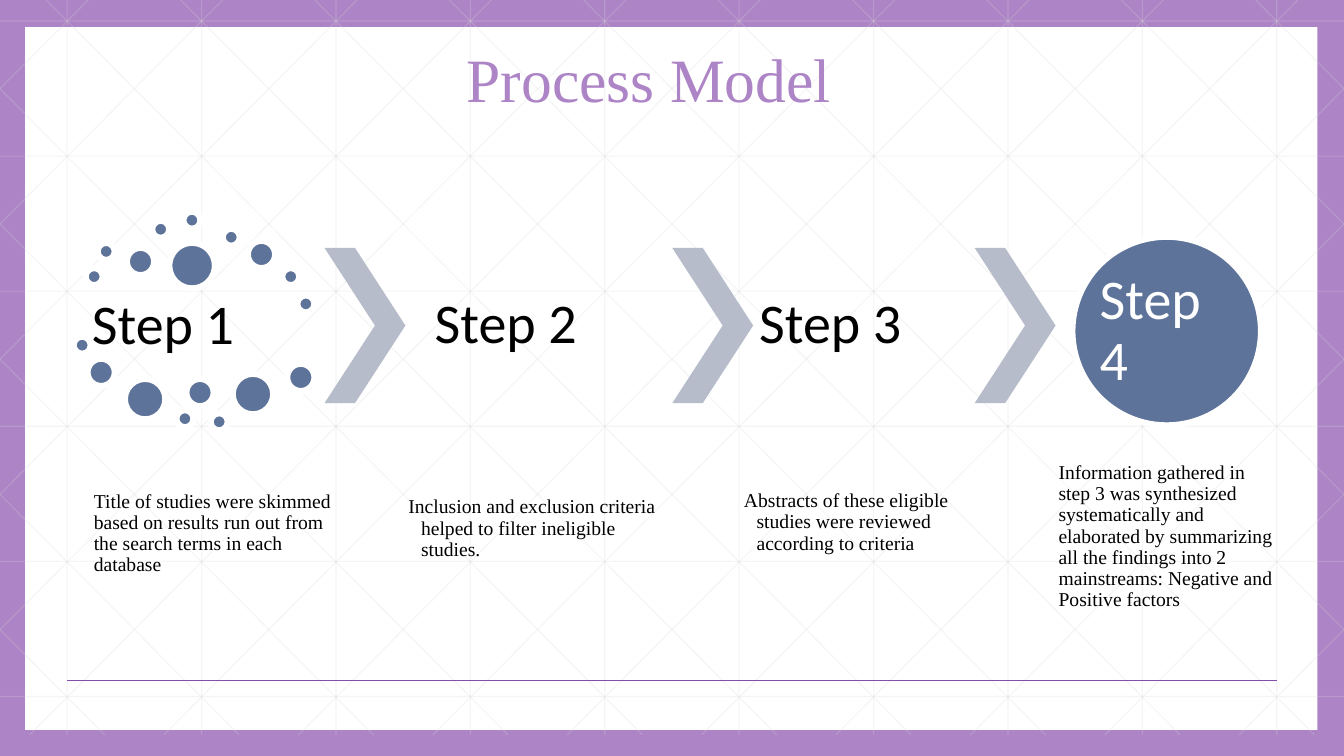
import dataclasses

import pptx
import pptx.dml.color
import pptx.enum.shapes
import pptx.enum.text
import pptx.oxml
import pptx.oxml.ns
import pptx.util

Pt = pptx.util.Pt
RGB = pptx.dml.color.RGBColor.from_string
SHAPE = pptx.enum.shapes.MSO_SHAPE
TOP = pptx.enum.text.MSO_ANCHOR.TOP
MIDDLE = pptx.enum.text.MSO_ANCHOR.MIDDLE


@dataclasses.dataclass(frozen=True)
class Theme:
    purple: str = "AD84C6"
    rule: str = "874EA9"
    grid: str = "D9D9D9"
    blue: str = "5D739A"
    chevron: str = "B6BCCA"
    white: str = "FFFFFF"
    black: str = "000000"
    serif: str = "Times New Roman"
    sans: str = "Calibri"
    title_size: int = 44
    step_size: int = 40
    body_size: int = 14


theme = Theme()
W, H = 960, 540

prs = pptx.Presentation()
prs.slide_width, prs.slide_height = Pt(W), Pt(H)
s = prs.slides.add_slide(prs.slide_layouts[6])
s.background.fill.solid()
s.background.fill.fore_color.rgb = RGB(theme.purple)


def add_text(text, box, font, size, color, inset=1.5, anchor=MIDDLE, hanging=0):
    """Add a one-paragraph text box; box and inset are in points."""
    tf = s.shapes.add_textbox(*map(Pt, box)).text_frame
    tf.word_wrap = True
    tf.vertical_anchor = anchor
    tf.margin_left = tf.margin_right = tf.margin_top = tf.margin_bottom = Pt(inset)
    p = tf.paragraphs[0]
    p.text = text
    p.line_spacing = 0.9
    if hanging:
        pPr = p._p.get_or_add_pPr()
        pPr.set("marL", str(Pt(hanging)))
        pPr.set("indent", str(-Pt(hanging)))
    r = p.runs[0]
    r.font.name, r.font.size = font, Pt(size)
    r.font.color.rgb = RGB(color)


def add_filled(kind, box, fill, outline=None):
    sp = s.shapes.add_shape(kind, *map(Pt, box))
    sp.shadow.inherit = False
    sp.fill.solid()
    sp.fill.fore_color.rgb = RGB(fill)
    if outline:
        sp.line.color.rgb = RGB(outline)
        sp.line.width = Pt(4.25)
    else:
        sp.line.fill.background()
    return sp


add_filled(SHAPE.RECTANGLE, (18, 19.4, 923, 502), theme.white)

# Background grid: verticals, horizontals, then mirrored diagonals clipped to the slide
grid_bottom, slope = 525, 0.994
lines = [(48 + 96 * i, 0, 48 + 96 * i, grid_bottom) for i in range(10)]
lines += [(0, 15 + 96.5 * i, W, 15 + 96.5 * i) for i in range(6)]
for i in range(-5, 10):
    x0 = 33 + 96 * i
    y1, y2 = max(0, -x0 / slope), min(grid_bottom, (W - x0) / slope)
    x1, x2 = x0 + slope * y1, x0 + slope * y2
    lines += [(x1, y1, x2, y2), (W - x1, y1, W - x2, y2)]
grid = [(line, theme.grid, 0.79, 25) for line in lines]
bottom_rule = ((48, 486, 912, 486), theme.rule, 1, 100)

for ends, color, width, opacity in grid + [bottom_rule]:
    cxn = s.shapes.add_connector(pptx.enum.shapes.MSO_CONNECTOR.STRAIGHT, *map(Pt, ends))
    cxn.line.color.rgb = RGB(color)
    cxn.line.width = Pt(width)
    if opacity < 100:
        clr = cxn.line._ln.find(".//" + pptx.oxml.ns.qn("a:srgbClr"))
        pptx.oxml.ns.qn("a:alpha")
        alpha = clr.makeelement(pptx.oxml.ns.qn("a:alpha"), {"val": str(opacity * 1000)})
        clr.append(alpha)
    spPr = cxn._element.spPr
    spPr.append(spPr.makeelement(pptx.oxml.ns.qn("a:effectLst"), {}))

add_text("Process Model", (326.2, 14.4, 307.4, 88.6), theme.serif,
         theme.title_size, theme.purple, inset=7.2)

# Dots around step 1, as left and top by diameter
dots = {
    12.2: [(61.2, 191.5), (69.8, 173.5), (108.7, 157.7), (131, 151.2), (159.1, 163.4),
           (201.6, 191.5), (212.4, 211), (52.6, 240.5), (126, 293), (150.5, 295.2)],
    19.4: [(90.7, 177.1), (177.1, 172.1), (62.6, 256.3), (133.2, 270.7), (205.2, 259.9)],
    28.8: [(89.3, 270.7), (166.3, 267.1)],
    32.4: [(121, 173.5)],
}
for size, places in dots.items():
    for x, y in places:
        add_filled(SHAPE.OVAL, (x, y, size, size), theme.blue, theme.white)

for x in (231.8, 480.2, 696.2):
    chevron = add_filled(SHAPE.CHEVRON, (x, 177.1, 57.8, 110.9), theme.chevron)
    chevron.adjustments[0] = 0.623

add_filled(SHAPE.OVAL, (766.1, 169.2, 134.6, 134.6), theme.blue, theme.white)

steps = [
    ("Step 1", (61.2, 207.4, 157.7, 51.8), theme.black, 4.5),
    ("Step 2", (306, 177.1, 157.7, 110.9), theme.black, 4.5),
    ("Step 3", (537.8, 177.1, 157.7, 110.9), theme.black, 4.5),
    ("Step 4", (785.5, 189.4, 95, 95), theme.white, 0),
]
for text, box, color, inset in steps:
    add_text(text, box, theme.sans, theme.step_size, color, inset)

descriptions = [
    ("Title of studies were skimmed based on results run out from the search terms "
     "in each database", (65.5, 332.6, 183.6, 97.2), MIDDLE, 0),
    ("Inclusion and exclusion criteria helped to filter ineligible studies.",
     (290.2, 353.5, 190, 116.6), TOP, 9),
    ("Abstracts of these eligible studies were reviewed according to criteria",
     (529.9, 349, 157.7, 79), TOP, 9),
    ("Information gathered in step 3 was synthesized systematically and elaborated by "
     "summarizing all the findings into 2 mainstreams: Negative and Positive factors",
     (754.6, 334.8, 157.7, 97.2), MIDDLE, 0),
]
for text, box, anchor, hanging in descriptions:
    add_text(text, box, theme.serif, theme.body_size, theme.black,
             anchor=anchor, hanging=hanging)

prs.save("out.pptx")
